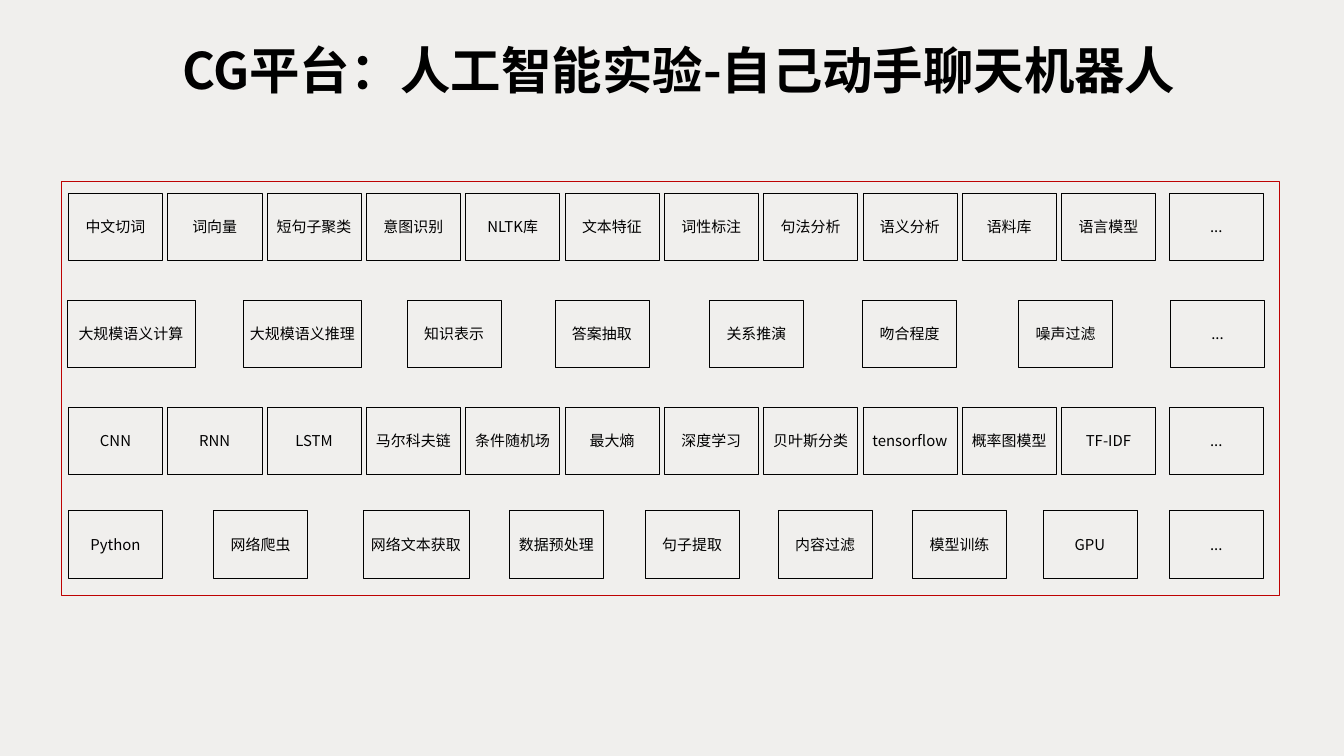
from pptx import Presentation
from pptx.dml.color import RGBColor
from pptx.enum.shapes import MSO_SHAPE
from pptx.enum.text import MSO_ANCHOR, MSO_AUTO_SIZE, PP_ALIGN
from pptx.util import Pt

RECTANGLE = MSO_SHAPE.RECTANGLE
MIDDLE = MSO_ANCHOR.MIDDLE
CENTER = PP_ALIGN.CENTER
NO_AUTOFIT = MSO_AUTO_SIZE.NONE

FONT = "Noto Sans CJK SC"
COLORS = {"background": "F0EFED", "text": "000000", "box": "000000", "frame": "BE0202"}
BOX_WIDTH, BOX_HEIGHT = 50.4, 36

# Even rows: eleven columns at one pitch, then the closing column
COLUMN_LEFTS = [3.6 + 53.2 * column for column in range(11)] + [593.3]

# Each row: top in the frame, lefts in the frame, labels
ROWS = [
    (6.1, COLUMN_LEFTS,
     ["中文切词", "词向量", "短句子聚类", "意图识别", "NLTK库", "文本特征",
      "词性标注", "句法分析", "语义分析", "语料库", "语言模型", "..."]),
    (63.4, [2.9, 97.2, 185, 264.2, 347, 429.1, 512.6, 594],
     ["大规模语义计算", "大规模语义推理", "知识表示", "答案抽取",
      "关系推演", "吻合程度", "噪声过滤", "..."]),
    (121, COLUMN_LEFTS,
     ["CNN", "RNN", "LSTM", "马尔科夫链", "条件随机场", "最大熵",
      "深度学习", "贝叶斯分类", "tensorflow", "概率图模型", "TF-IDF", "..."]),
    (176.4, [3.6, 81.4, 161.3, 239.8, 312.5, 383.8, 455.8, 525.6, 593.3],
     ["Python", "网络爬虫", "网络文本获取", "数据预处理", "句子提取",
      "内容过滤", "模型训练", "GPU", "..."]),
]
WIDE_BOXES = {"大规模语义计算": 68.4, "大规模语义推理": 63.4, "网络文本获取": 56.9}


def color(name):
    return RGBColor.from_string(COLORS[name])


def write_text(shape, text, size, bold, side_margin, end_margin):
    frame = shape.text_frame
    frame.auto_size = NO_AUTOFIT
    frame.word_wrap = True
    frame.vertical_anchor = MIDDLE
    frame.margin_left = frame.margin_right = Pt(side_margin)
    frame.margin_top = frame.margin_bottom = Pt(end_margin)
    paragraph = frame.paragraphs[0]
    paragraph.alignment = CENTER
    run = paragraph.add_run()
    run.text = text
    run.font.name = FONT
    run.font.size = Pt(size)
    run.font.bold = bold
    run.font.color.rgb = color("text")
    return paragraph


def add_outline(slide, left, top, width, height, line_color, line_width):
    shape = slide.shapes.add_shape(RECTANGLE, Pt(left), Pt(top), Pt(width), Pt(height))
    shape.shadow.inherit = False
    shape.fill.background()
    shape.line.color.rgb = color(line_color)
    shape.line.width = Pt(line_width)
    return shape


def place_title(slide, left, top, width, height):
    title = slide.shapes.title
    title.left, title.top = Pt(left), Pt(top)
    title.width, title.height = Pt(width), Pt(height)
    paragraph = write_text(title, "CG平台：人工智能实验-自己动手聊天机器人", 27, True, 5, 2.9)
    paragraph.line_spacing = 0.9


def add_topic_map(slide, left, top, width, height):
    add_outline(slide, left, top, width, height, "frame", 0.5)
    for row_top, lefts, labels in ROWS:
        for box_left, label in zip(lefts, labels):
            box = add_outline(slide, left + box_left, top + row_top,
                              WIDE_BOXES.get(label, BOX_WIDTH), BOX_HEIGHT, "box", 0.25)
            write_text(box, label, 8, False, 0, 3.6)


def main():
    presentation = Presentation()
    presentation.slide_width, presentation.slide_height = Pt(720), Pt(405)
    slide = presentation.slides.add_slide(presentation.slide_layouts[5])
    slide.background.fill.solid()
    slide.background.fill.fore_color.rgb = color("background")

    # Heading
    place_title(slide, 53.3, 0, 620.6, 78.5)
    # Four rows of topics in one frame
    add_topic_map(slide, 33.1, 97.2, 652.3, 221.8)

    presentation.save("out.pptx")


if __name__ == "__main__":
    main()
